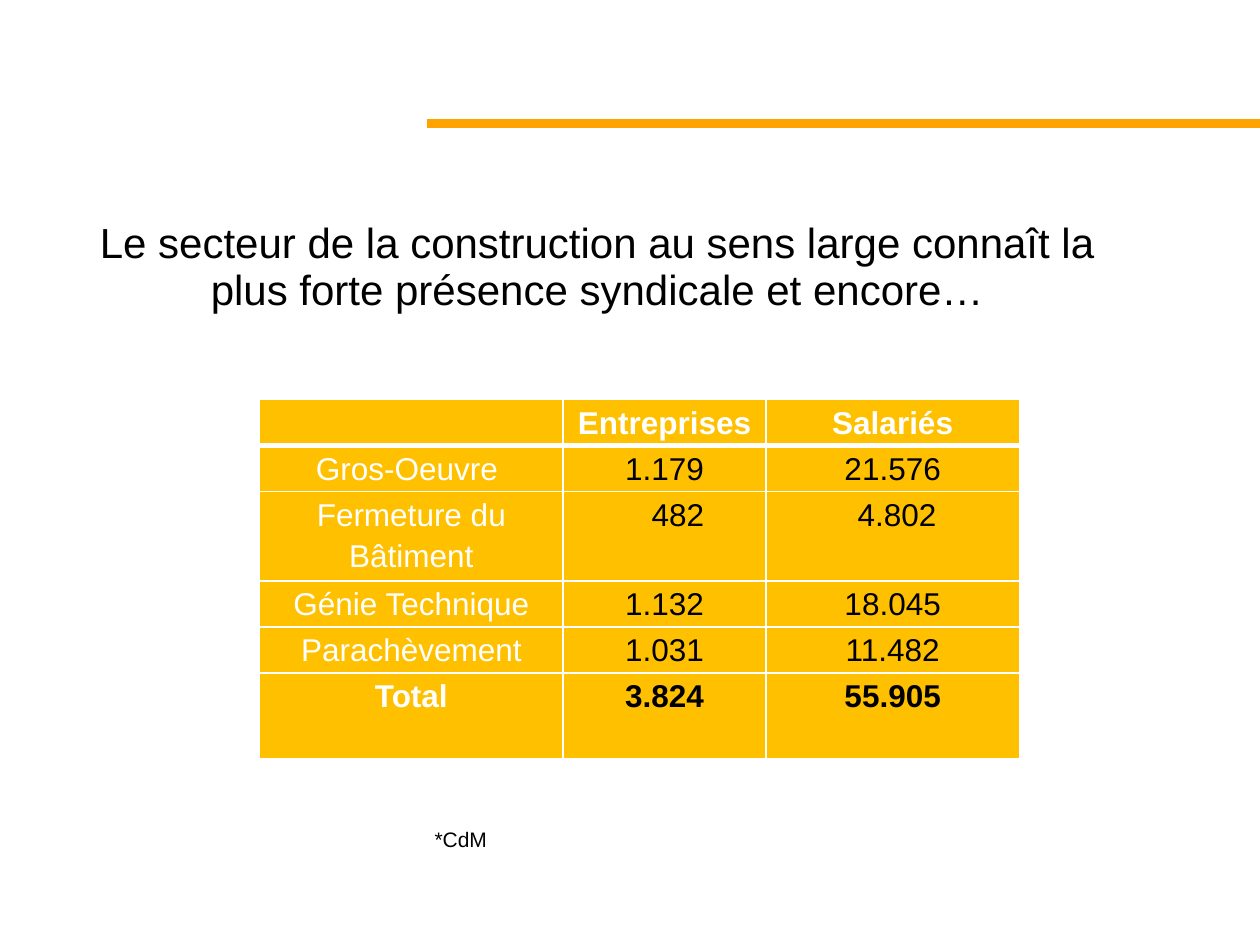
from lxml.etree import SubElement
from pptx import Presentation
from pptx.dml.color import RGBColor
from pptx.enum.shapes import MSO_CONNECTOR as CONN
from pptx.enum.text import MSO_ANCHOR as ANCHOR, PP_ALIGN as ALIGN
from pptx.oxml.ns import qn
from pptx.util import Inches, Pt

ROWS = [
    ("", "Entreprises", "Salariés"),
    ("Gros-Oeuvre", "1.179", "21.576"),
    ("Fermeture du Bâtiment", "482", "4.802"),
    ("Génie Technique", "1.132", "18.045"),
    ("Parachèvement", "1.031", "11.482"),
    ("Total", "3.824", "55.905"),
]
COL_WIDTHS = [2.41, 1.61, 2.01]
ROW_HEIGHTS = [0.35, 0.34, 0.69, 0.34, 0.34, 0.68]
INDENTS = {
    "Gros-Oeuvre": {"margin_right": Inches(0.08)},
    "482": {"margin_left": Inches(0.22)},
    "4.802": {"margin_left": Inches(0.08)},
}


def color(value):
    return RGBColor.from_string(value)


def apply(obj, values):
    for name, value in values.items():
        setattr(obj, name, value)


class Deck:
    font = "Arial"
    black, white = "000000", "FFFFFF"
    rule, cell_fill = "FFA300", "FFC000"

    def __init__(self):
        self.prs = Presentation()
        apply(self.prs, {"slide_width": Inches(10), "slide_height": Inches(7.5)})
        self.s = self.prs.slides.add_slide(self.prs.slide_layouts[6])

    def paragraph(self, tf, text, size, ink, bold=False, **fmt):
        p = tf.paragraphs[0]
        apply(p, fmt)
        target = p
        if text:
            target = p.add_run()
            target.text = text
        apply(target.font, {"name": self.font, "size": Pt(size), "bold": bold})
        target.font.color.rgb = color(ink)

    def line(self, x1, y1, x2, y2, width):
        sp = self.s.shapes.add_connector(
            CONN.STRAIGHT, Inches(x1), Inches(y1), Inches(x2), Inches(y2))
        sp.line.color.rgb = color(self.rule)
        sp.line.width = Pt(width)
        SubElement(sp._element.spPr, qn("a:effectLst"))

    def text(self, x, y, w, h, text, size, frame=None, **fmt):
        sp = self.s.shapes.add_textbox(Inches(x), Inches(y), Inches(w), Inches(h))
        tf = sp.text_frame
        apply(tf, {"word_wrap": True, **(frame or {})})
        self.paragraph(tf, text, size, self.black, **fmt)

    def border(self, cell, side, width):
        ln = SubElement(cell._tc.get_or_add_tcPr(), qn(f"a:ln{side}"), w=str(Pt(width)))
        fill = SubElement(ln, qn("a:solidFill"))
        SubElement(fill, qn("a:srgbClr"), val=self.white)

    def cell(self, cell, text, row, col):
        for side in "LRTB":
            heavy = (row, side) in ((0, "B"), (1, "T"))
            self.border(cell, side, 3 if heavy else 1)
        cell.fill.solid()
        cell.fill.fore_color.rgb = color(self.cell_fill)
        margins = dict.fromkeys(
            ("margin_left", "margin_right", "margin_top", "margin_bottom"), Inches(0.01))
        apply(cell, {**margins, **INDENTS.get(text, {})})
        ink = self.white if row == 0 or col == 0 else self.black
        self.paragraph(cell.text_frame, text, 18, ink, row in (0, len(ROWS) - 1),
                       alignment=ALIGN.CENTER, line_spacing=1.15)

    def table(self, x, y, rows, widths, heights):
        table = self.s.shapes.add_table(
            len(rows), len(widths), Inches(x), Inches(y),
            Inches(sum(widths)), Inches(sum(heights))).table
        for column, width in zip(table.columns, widths):
            column.width = Inches(width)
        for i, (values, height) in enumerate(zip(rows, heights)):
            table.rows[i].height = Inches(height)
            for j, value in enumerate(values):
                self.cell(table.cell(i, j), value, i, j)


def main():
    deck = Deck()
    deck.line(3.39, 0.98, 10, 0.98, 5)
    frame = {"margin_left": 0, "margin_right": 0, "margin_top": 0,
             "margin_bottom": 0, "vertical_anchor": ANCHOR.MIDDLE}
    deck.text(0.62, 1.58, 8.24, 1.09,
              "Le secteur de la construction au sens large connaît la "
              "plus forte présence syndicale et encore…",
              24, frame, alignment=ALIGN.CENTER, line_spacing=0.93)
    deck.table(2.06, 3.17, ROWS, COL_WIDTHS, ROW_HEIGHTS)
    deck.text(3.35, 6.51, 3.39, 0.3, "*CdM", 12)
    deck.prs.save("out.pptx")


if __name__ == "__main__":
    main()
